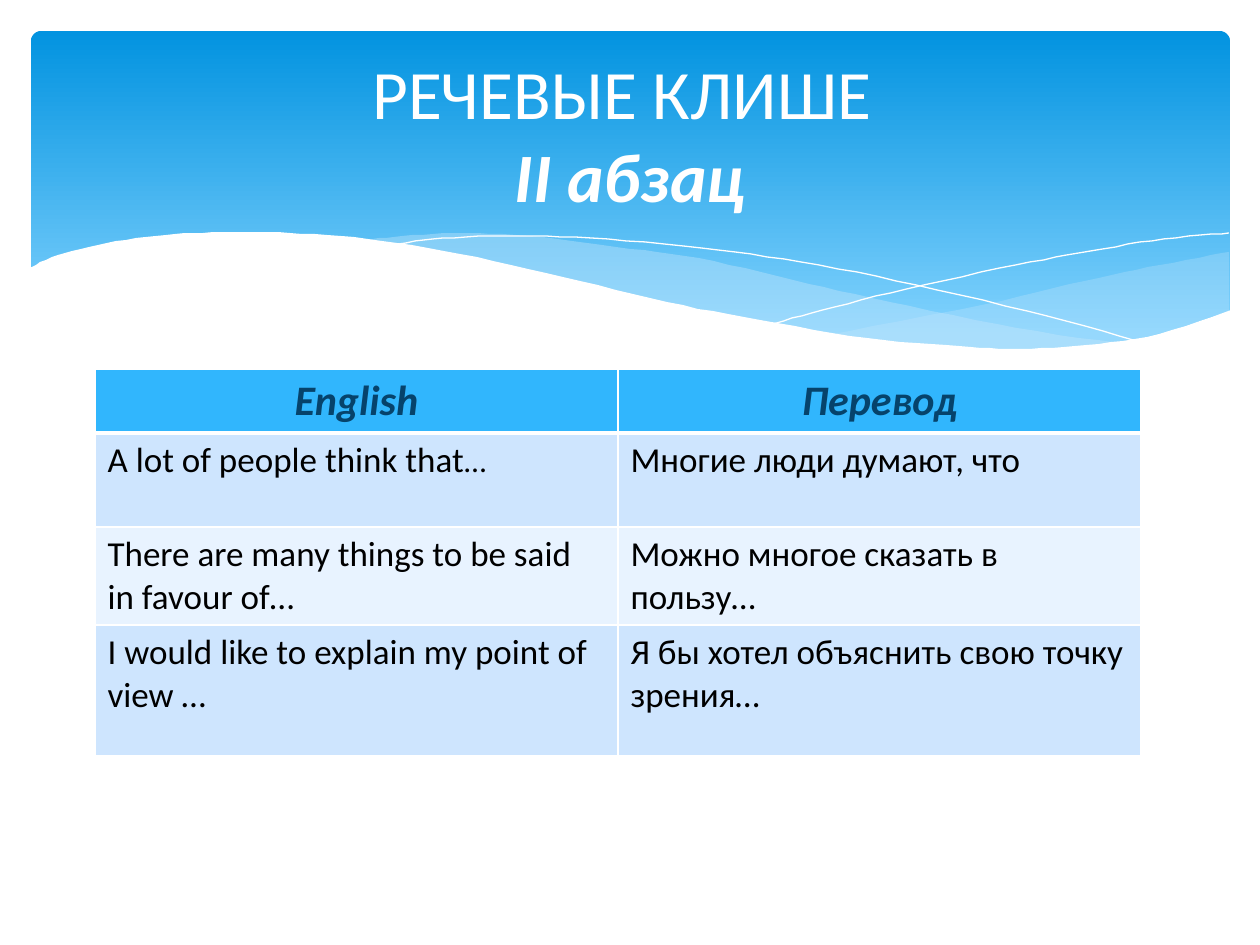
from lxml.etree import SubElement
from pptx import Presentation
from pptx.dml.color import RGBColor
from pptx.enum.shapes import MSO_SHAPE
from pptx.enum.text import MSO_ANCHOR, MSO_AUTO_SIZE, PP_ALIGN
from pptx.oxml.ns import qn
from pptx.util import Pt

PX = 914400 // 126
FONT = "Calibri"
COLORS = {
    "white": "FFFFFF", "black": "000000", "navy": "06436B", "head": "31B6FD",
    "odd": "CEE5FE", "even": "E8F3FF", "mist": "C6E7FC",
    "top": "0293E0", "low": "83D3FE",
}

# Each wave is a list of curves, and each curve a list of knots.
RIGHT = [
    [(1229, 252), (1160, 265), (1085, 281), (982, 305), (833, 334)],
    [(833, 334), (922, 345), (998, 349), (1076, 348), (1150, 336), (1229, 311)],
]
MIDDLE = [
    [(360, 241), (394, 237), (455, 233), (529, 236), (616, 247), (699, 258),
     (793, 280), (890, 302), (1017, 328), (1125, 344)],
    [(1125, 344), (1068, 349), (1003, 350), (927, 347), (838, 335), (713, 312),
     (566, 280), (483, 261), (360, 241)],
]
FALL = [[(389, 246), (433, 239), (505, 236), (591, 238), (701, 248),
         (801, 262), (916, 285), (1047, 316), (1143, 343)]]
RISE = [[(772, 324), (823, 310), (907, 289), (1016, 265), (1091, 251),
         (1164, 239), (1229, 233)]]
FRONT = [
    [(29, 268), (58, 255), (107, 243), (166, 235), (223, 232), (290, 233),
     (368, 239), (460, 254), (563, 277), (667, 302), (760, 320), (867, 338),
     (959, 346), (1019, 349), (1087, 345), (1159, 334), (1231, 310)],
    [(1231, 415), (29, 415)],
]

HEADS = ["English", "Перевод"]
ROWS = [
    ("A lot of people think that", "Многие люди думают, что"),
    ("There are many things to be said in favour of…",
     "Можно многое сказать в пользу…"),
    ("I would like to explain my point of view …",
     "Я бы хотел объяснить свою точку зрения…"),
]
HEIGHTS = [62, 94, 98, 131]


def rgb(name):
    return RGBColor.from_string(COLORS[name])


def smooth(knots, steps=6):
    """Return points on a Catmull-Rom curve through the knots."""
    if len(knots) < 3:
        return knots
    ends = [knots[0], *knots, knots[-1]]
    points = [knots[0]]
    for a, b, c, d in zip(ends, ends[1:], ends[2:], ends[3:]):
        for step in range(1, steps + 1):
            t = step / steps
            points.append(tuple(
                (2 * q + (r - p) * t + (2 * p - 5 * q + 4 * r - s) * t ** 2
                 + (3 * q - p - 3 * r + s) * t ** 3) / 2
                for p, q, r, s in zip(a, b, c, d)))
    return points


def write(para, text, size=20, color="black", bold=False, italic=False,
          align=PP_ALIGN.LEFT):
    para.alignment = align
    run = para.add_run()
    run.text = text
    font = run.font
    font.name, font.size = FONT, Pt(size)
    font.bold, font.italic = bold, italic
    font.color.rgb = rgb(color)


def edge(cell, side, width):
    """Draw a white border on one side of a cell."""
    line = SubElement(cell._tc.get_or_add_tcPr(), qn(f"a:ln{side}"),
                      w=str(Pt(width)))
    fill = SubElement(line, qn("a:solidFill"))
    SubElement(fill, qn("a:srgbClr"), val=COLORS["white"])


class Page:
    def __init__(self, deck):
        self.slide = deck.slides.add_slide(deck.slide_layouts[5])
        self.shapes = self.slide.shapes

    def banner(self, x, y, w, h):
        box = self.shapes.add_shape(MSO_SHAPE.ROUNDED_RECTANGLE,
                                    x * PX, y * PX, w * PX, h * PX)
        box.adjustments[0] = 0.03
        box.shadow.inherit = False
        box.line.fill.background()
        box.fill.gradient()
        box.fill.gradient_angle = 270
        stops = zip(box.fill.gradient_stops, [0, 0.9], ["top", "low"])
        for stop, place, color in stops:
            stop.position = place
            stop.color.rgb = rgb(color)

    def wave(self, curves, fill=None, alpha=100):
        """Draw a filled wave, or a white hairline if there is no fill."""
        first, *rest = [p for curve in curves for p in smooth(curve)]
        pen = self.shapes.build_freeform(*first, scale=PX)
        pen.add_line_segments(rest, close=fill is not None)
        shape = pen.convert_to_shape()
        shape.shadow.inherit = False
        if fill is None:
            shape.fill.background()
            shape.line.color.rgb = rgb("white")
            shape.line.width = Pt(0)
            return
        shape.line.fill.background()
        shape.fill.solid()
        shape.fill.fore_color.rgb = rgb(fill)
        if alpha < 100:
            tint = next(shape._element.spPr.iter(qn("a:srgbClr")))
            SubElement(tint, qn("a:alpha"), val=str(alpha * 1000))

    def title(self, x, y, w, h, top, sub):
        box = self.shapes.title
        box.left, box.top, box.width, box.height = (v * PX for v in (x, y, w, h))
        frame = box.text_frame
        frame.auto_size = MSO_AUTO_SIZE.NONE
        frame.vertical_anchor = MSO_ANCHOR.MIDDLE
        para = frame.paragraphs[0]
        style = dict(size=39.6, color="white", align=PP_ALIGN.CENTER)
        write(para, top, **style)
        para.add_line_break()
        write(para, sub, bold=True, italic=True, **style)
        self.shapes._spTree.append(box._element)

    def table(self, x, y, w, heads, rows, heights):
        grid = self.shapes.add_table(len(heights), len(heads), x * PX, y * PX,
                                     w * PX, sum(heights) * PX).table
        for row, height in zip(grid.rows, heights):
            row.height = height * PX
        for r, texts in enumerate([heads, *rows]):
            for c, text in enumerate(texts):
                cell = grid.cell(r, c)
                for side in "LRTB":
                    thick = (r, side) in [(0, "B"), (1, "T")]
                    edge(cell, side, 3 if thick else 1)
                cell.fill.solid()
                shade = "head" if r == 0 else "odd" if r % 2 else "even"
                cell.fill.fore_color.rgb = rgb(shade)
                para = cell.text_frame.paragraphs[0]
                if r == 0:
                    write(para, text, size=24, color="navy", bold=True,
                          italic=True, align=PP_ALIGN.CENTER)
                else:
                    write(para, text)
        write(grid.cell(1, 0).text_frame.paragraphs[0], "…", size=18)


def main():
    deck = Presentation()
    deck.slide_width, deck.slide_height = 1260 * PX, 945 * PX
    page = Page(deck)
    page.banner(31, 31, 1199, 340)
    page.wave(RIGHT, "mist", 29)
    page.wave(MIDDLE, "mist", 40)
    page.wave(FALL)
    page.wave(RISE)
    page.wave(FRONT, "white")
    page.table(95, 369, 1046, HEADS, ROWS, HEIGHTS)
    page.title(63, 47, 1134, 172, "РЕЧЕВЫЕ КЛИШЕ ", "II абзац")
    deck.save("out.pptx")


if __name__ == "__main__":
    main()
